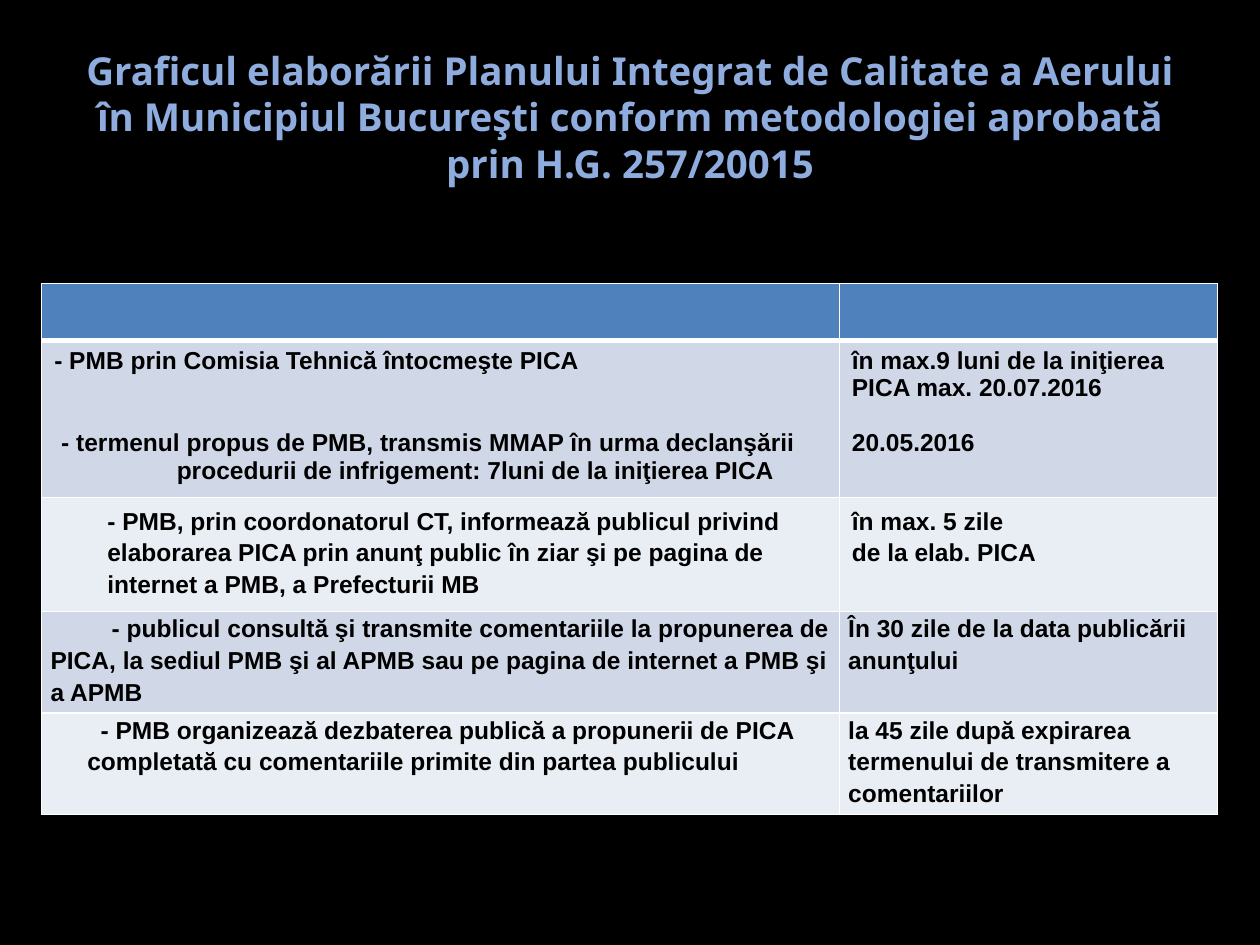
import pptx
import pptx.dml.color
import pptx.enum.text
import pptx.oxml.ns
import pptx.util
from dataclasses import dataclass
from lxml import etree

Cm, Pt = pptx.util.Cm, pptx.util.Pt
RGB = pptx.dml.color.RGBColor.from_string


@dataclass(frozen=True)
class Theme:
    background: str = "000000"
    title: str = "8FACDE"
    text: str = "000000"
    header: str = "4F81BD"
    bands: tuple = ("D0D8E8", "E9EDF4")
    border: str = "FFFFFF"
    title_font: str = "Noto Sans"
    body_font: str = "Arial"
    title_size: int = 22
    body_size: int = 14


THEME = Theme()
TITLE_FORMAT = {"name": THEME.title_font, "size": Pt(THEME.title_size), "bold": True}
BODY_FORMAT = {"name": THEME.body_font, "size": Pt(THEME.body_size), "bold": True}
LOOSE = {"line_spacing": 1.15}
TIGHT = {"margin_left": Cm(0.18), "margin_right": Cm(0.18),
         "margin_top": 0, "margin_bottom": 0}

TITLE = ("Graficul elaborării Planului Integrat de Calitate a Aerului "
         "în Municipiul Bucureşti conform metodologiei aprobată prin H.G. 257/20015")

# Each row: height in cm, cell margins, then the paragraphs of both cells
# as (text, paragraph format, left margin in cm, first-line indent in cm)
ROWS = [
    (3.16, {},
     [("- PMB prin Comisia Tehnică întocmeşte PICA", {}, 0, 0),
      ("- termenul propus de PMB, transmis MMAP în urma declanşării",
       {"space_before": Pt(31.5)}, 0.14, 0),
      ("procedurii de infrigement: 7luni de la iniţierea PICA", {}, 2.47, 0)],
     [("în max.9 luni de la iniţierea PICA max. 20.07.2016", {}, 0, 0),
      ("20.05.2016", {"space_before": Pt(15.75)}, 0, 0)]),
    (2.16, {},
     [("- PMB, prin coordonatorul CT, informează publicul privind elaborarea PICA "
       "prin anunţ public în ziar şi pe pagina de internet a PMB, a Prefecturii MB",
       LOOSE, 1.07, 0)],
     [("în max. 5 zile", LOOSE, 0, 0),
      ("de la elab. PICA", LOOSE, 0, 0)]),
    (1.92, TIGHT,
     [("- publicul consultă şi transmite comentariile la propunerea de PICA, la sediul "
       "PMB şi al APMB sau pe pagina de internet a PMB şi a APMB", LOOSE, 0, 1.23)],
     [("În 30 zile de la data publicării anunţului", LOOSE, 0, 0)]),
    (1.92, TIGHT,
     [("- PMB organizează dezbaterea publică a propunerii de PICA completată cu "
       "comentariile primite din partea publicului", LOOSE, 0.74, 0.27)],
     [("la 45 zile după expirarea termenului de transmitere a comentariilor",
       LOOSE, 0, 0)]),
]
HEADER_HEIGHT = 1.15
COLUMN_WIDTHS = (16.08, 7.62)


def apply_format(target, values):
    for name, value in values.items():
        setattr(target, name, value)


def add_run(p, text, values, color):
    r = p.add_run()
    r.text = text
    apply_format(r.font, values)
    r.font.color.rgb = RGB(color)


def add_title(s):
    sp = s.shapes.add_textbox(Cm(1.27), Cm(0.76), Cm(22.86), Cm(3.18))
    tf = sp.text_frame
    apply_format(tf, {"word_wrap": True,
                      "vertical_anchor": pptx.enum.text.MSO_ANCHOR.MIDDLE})
    p = tf.paragraphs[0]
    p.alignment = pptx.enum.text.PP_ALIGN.CENTER
    add_run(p, TITLE, TITLE_FORMAT, THEME.title)


def set_borders(cell, bottom=1, top=1):
    qn = pptx.oxml.ns.qn
    tc_pr = cell._tc.get_or_add_tcPr()
    sides = (("a:lnL", 1), ("a:lnR", 1), ("a:lnT", top), ("a:lnB", bottom))
    for i, (tag, width) in enumerate(sides):
        ln = etree.Element(qn(tag), w=str(Pt(width)))
        fill = etree.SubElement(ln, qn("a:solidFill"))
        etree.SubElement(fill, qn("a:srgbClr"), val=THEME.border)
        tc_pr.insert(i, ln)


def style_cell(cell, color, **borders):
    cell.fill.solid()
    cell.fill.fore_color.rgb = RGB(color)
    set_borders(cell, **borders)


def fill_cell(cell, paragraphs):
    tf = cell.text_frame
    for i, (text, values, margin, indent) in enumerate(paragraphs):
        p = tf.add_paragraph() if i else tf.paragraphs[0]
        apply_format(p, values)
        p_pr = p._p.get_or_add_pPr()
        p_pr.set("marL", str(Cm(margin)))
        p_pr.set("indent", str(Cm(indent)))
        add_run(p, text, BODY_FORMAT, THEME.text)


def add_schedule(s):
    heights = [HEADER_HEIGHT] + [row[0] for row in ROWS]
    table = s.shapes.add_table(len(heights), len(COLUMN_WIDTHS), Cm(0.84), Cm(5.72),
                               Cm(sum(COLUMN_WIDTHS)), Cm(sum(heights))).table
    for column, width in zip(table.columns, COLUMN_WIDTHS):
        column.width = Cm(width)
    for row, height in zip(table.rows, heights):
        row.height = Cm(height)

    # Header row
    for cell in table.rows[0].cells:
        style_cell(cell, THEME.header, bottom=3)

    # Steps and deadlines
    for i, (_, margins, *contents) in enumerate(ROWS):
        for cell, paragraphs in zip(table.rows[i + 1].cells, contents):
            style_cell(cell, THEME.bands[i % 2], top=1 if i else 3)
            apply_format(cell, margins)
            fill_cell(cell, paragraphs)


def main():
    prs = pptx.Presentation()
    prs.slide_width, prs.slide_height = Cm(25.4), Cm(19.05)
    s = prs.slides.add_slide(prs.slide_layouts[6])
    s.background.fill.solid()
    s.background.fill.fore_color.rgb = RGB(THEME.background)
    add_title(s)
    add_schedule(s)
    prs.save("out.pptx")


if __name__ == "__main__":
    main()
